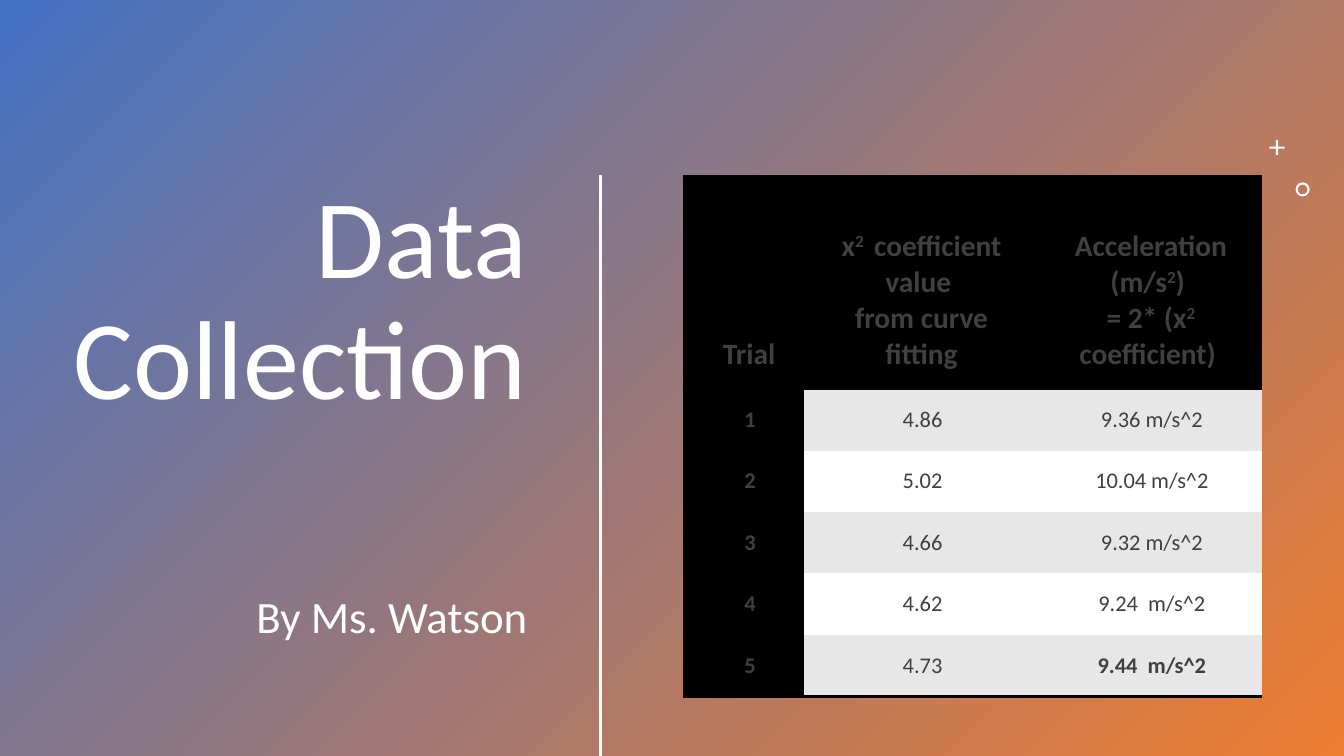
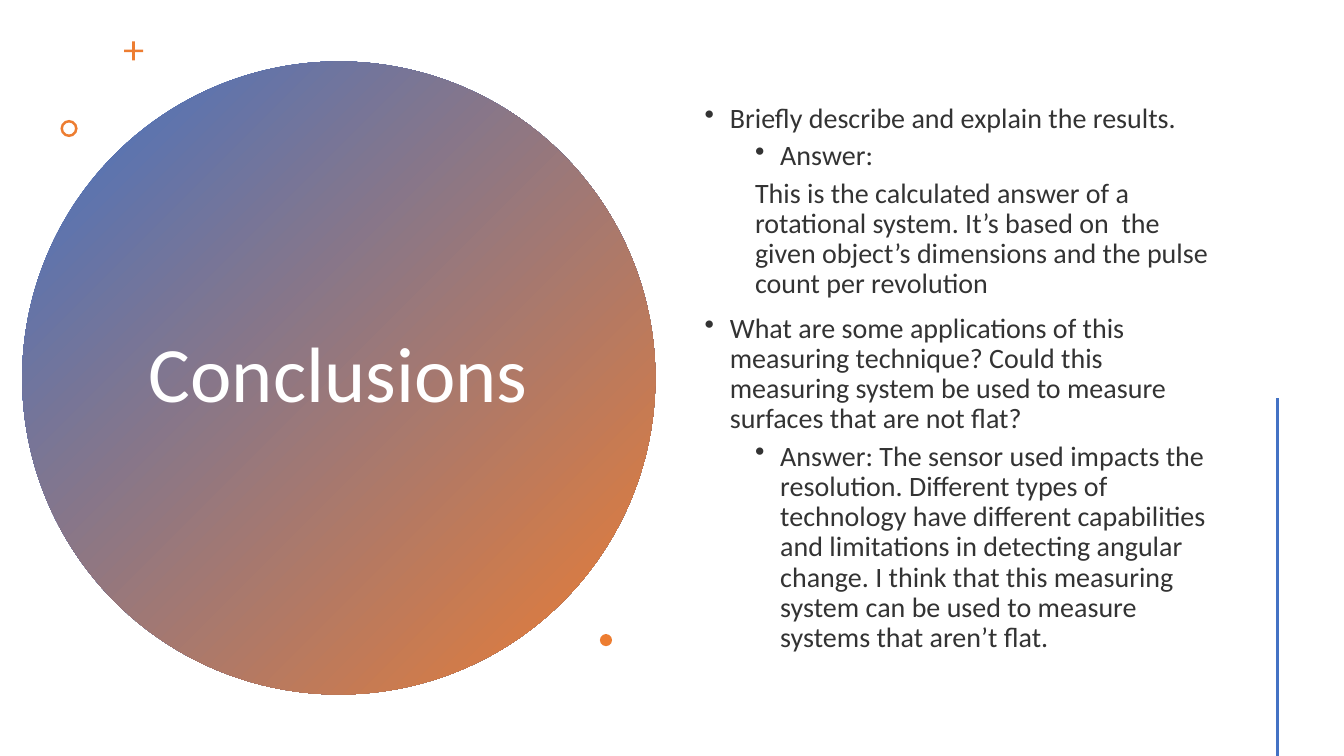
import pptx
import pptx.dml.color
import pptx.enum.shapes
import pptx.enum.text
import pptx.oxml
import pptx.oxml.ns
import pptx.util
from pptx.util import Inches

RGBColor = pptx.dml.color.RGBColor
Shape = pptx.enum.shapes.MSO_SHAPE
Align = pptx.enum.text.PP_ALIGN
Anchor = pptx.enum.text.MSO_ANCHOR
qn = pptx.oxml.ns.qn

FONT = "Calibri"
BLUE = RGBColor(0x44, 0x72, 0xC4)
ORANGE = RGBColor(0xED, 0x7D, 0x31)
WHITE = RGBColor(0xFF, 0xFF, 0xFF)
BLACK = RGBColor(0x00, 0x00, 0x00)
BODY_INK = RGBColor(0x33, 0x33, 0x33)
TABLE_INK = RGBColor(0x40, 0x40, 0x40)
BAND = RGBColor(0xE7, 0xE7, 0xE7)
PLAIN_TABLE_STYLE = "{2D5ABB26-0587-4C30-8999-92F81FD0307C}"

HEADINGS = [
    "Trial",
    "x|2 | coefficient value \nfrom curve fitting",
    "Acceleration (m/s|2|) \n= 2* (x|2 |coefficient) ",
]
TRIALS = [
    ("4.86", "9.36 m/s^2"),
    ("5.02", "10.04 m/s^2"),
    ("4.66", "9.32 m/s^2"),
    ("4.62", "9.24  m/s^2"),
    ("4.73", "9.44  m/s^2"),
]
DISCUSSION = [
    ("Briefly describe and explain the results.", 0, 0.25, True),
    ("Answer:", 1, 0.75, True),
    ("This is the calculated answer of a rotational system. It’s based on  the given "
     "object’s dimensions and the pulse count per revolution", 1, 0.5, False),
    ("What are some applications of this measuring technique? Could this measuring "
     "system be used to measure surfaces that are not flat?", 0, 0.25, True),
    ("Answer: The sensor used impacts the resolution. Different types of technology "
     "have different capabilities and limitations in detecting angular change. I think "
     "that this measuring system can be used to measure systems that aren’t flat.",
     1, 0.75, True),
]


def write(paragraph, text, size, color, bold=False, align=None, spacing=None, before=None):
    """Write text into a paragraph; pieces between bars are raised."""
    paragraph.alignment = align
    paragraph.line_spacing = spacing
    if before is not None:
        paragraph.space_before = pptx.util.Pt(before)
    for position, piece in enumerate(text.split("|")):
        for row, words in enumerate(piece.split("\n")):
            if row:
                paragraph.add_line_break()
            run = paragraph.add_run()
            run.text = words
            run.font.name = FONT
            run.font.size = pptx.util.Pt(size)
            run.font.bold = bold
            run.font.color.rgb = color
            if position % 2:
                run._r.get_or_add_rPr().set("baseline", "30000")


def set_indent(paragraph, margin, bulleted):
    """Indent a paragraph and give it a hanging bullet if asked."""
    properties = paragraph._p.get_or_add_pPr()
    properties.set("marL", str(Inches(margin)))
    properties.set("indent", str(Inches(-0.25) if bulleted else 0))
    if bulleted:
        bullet = properties.makeelement(qn("a:buChar"), {"char": "•"})
        properties.append(bullet)


def add_title(slide, text, box, size, align, anchor):
    """Place and format the title placeholder."""
    title = slide.shapes.title
    title.left, title.top, title.width, title.height = map(Inches, box)
    frame = title.text_frame
    frame.word_wrap = True
    frame.auto_size = pptx.enum.text.MSO_AUTO_SIZE.NONE
    frame.vertical_anchor = anchor
    write(frame.paragraphs[0], text, size, WHITE, align=align, spacing=0.9)


def add_text_frame(slide, box, anchor):
    """Add a wrapping text box and return its frame."""
    frame = slide.shapes.add_textbox(*map(Inches, box)).text_frame
    frame.word_wrap = True
    frame.vertical_anchor = anchor
    return frame


def add_shape(slide, preset, box, color=None):
    """Add an unlined shape, solid if a color is given."""
    shape = slide.shapes.add_shape(preset, *map(Inches, box))
    shape.shadow.inherit = False
    shape.line.fill.background()
    if color is not None:
        shape.fill.solid()
        shape.fill.fore_color.rgb = color
    return shape


def add_gradient_backdrop(slide, preset, box):
    """Add a diagonal blue to orange shape behind everything else."""
    backdrop = add_shape(slide, preset, box)
    backdrop.fill.gradient()
    backdrop.fill.gradient_angle = 315
    for stop, color, place in zip(backdrop.fill.gradient_stops, (BLUE, ORANGE), (0, 1)):
        stop.color.rgb = color
        stop.position = place
    slide.shapes._spTree.insert(2, backdrop._element)


def add_plus_and_ring(slide, plus, ring, color):
    """Add the small plus and ring, each given as left, top and size."""
    for preset, (left, top, size), adjustment in (
        (Shape.CROSS, plus, 0.43),
        (Shape.DONUT, ring, 0.15),
    ):
        mark = add_shape(slide, preset, (left, top, size, size), color)
        mark.adjustments[0] = adjustment


def add_vertical_rule(slide, x, top, color):
    """Add a line that runs down to the slide's lower edge."""
    rule = slide.shapes.add_connector(
        pptx.enum.shapes.MSO_CONNECTOR.STRAIGHT,
        Inches(x), Inches(top), Inches(x), Inches(7.5))
    rule.line.color.rgb = color
    rule.line.width = pptx.util.Pt(2)
    properties = rule._element.spPr
    properties.append(properties.makeelement(qn("a:effectLst"), {}))


def add_cell_border(cell, sides):
    """Draw black borders on the named sides of a cell."""
    properties = cell._tc.get_or_add_tcPr()
    for index, side in enumerate(sides):
        border = pptx.oxml.parse_xml(
            f'<a:ln{side} xmlns:a="http://schemas.openxmlformats.org/drawingml/2006/main" '
            f'w="25400"><a:solidFill><a:srgbClr val="{BLACK}"/></a:solidFill></a:ln{side}>')
        properties.insert(index, border)


def fill_cell(cell, text, size, fill, bold, anchor, inset):
    """Fill, pad and write one table cell."""
    cell.fill.solid()
    cell.fill.fore_color.rgb = fill
    cell.vertical_anchor = anchor
    cell.margin_left = Inches(0.29)
    cell.margin_top = cell.margin_right = cell.margin_bottom = Inches(inset)
    write(cell.text_frame.paragraphs[0], text, size, TABLE_INK, bold=bold, align=Align.CENTER)


def add_trial_table(slide):
    """Add the table of measured trials."""
    widths, heights = (1.2, 2.22, 2.33), [2.11] + [0.61] * len(TRIALS)
    table = slide.shapes.add_table(
        len(heights), len(widths), Inches(6.77), Inches(1.75),
        Inches(sum(widths)), Inches(sum(heights))).table
    table._tbl.tblPr.find(qn("a:tableStyleId")).text = PLAIN_TABLE_STYLE
    table.horz_banding = False
    for column, width in zip(table.columns, widths):
        column.width = Inches(width)
    for row, height in zip(table.rows, heights):
        row.height = Inches(height)
    for column, heading in enumerate(HEADINGS):
        cell = table.cell(0, column)
        fill_cell(cell, heading, 21, BLACK, True, Anchor.BOTTOM, 0.17)
        add_cell_border(cell, "TB")
    last = len(TRIALS)
    for number, values in enumerate(TRIALS, start=1):
        for column, value in enumerate((str(number), *values)):
            cell = table.cell(number, column)
            band = BAND if number % 2 else WHITE
            bold = column == 0 or (number, column) == (last, 2)
            fill_cell(cell, value, 16, band if column else BLACK, bold, Anchor.MIDDLE, 0.15)
            if number == last:
                add_cell_border(cell, "B")


def build_data_slide(slide):
    """Build the data collection slide."""
    add_gradient_backdrop(slide, Shape.RECTANGLE, (0, 0, 13.33, 7.5))
    add_title(slide, "Data Collection", (0.5, 1.75, 4.83, 3.97), 80, Align.RIGHT, Anchor.TOP)
    byline = add_text_frame(slide, (0.5, 5.85, 4.83, 1.13), Anchor.TOP)
    write(byline.paragraphs[0], "By Ms. Watson", 32, WHITE,
          align=Align.RIGHT, spacing=0.9, before=10)
    add_vertical_rule(slide, 5.96, 1.74, WHITE)
    add_plus_and_ring(slide, (12.59, 1.39, 0.15), (12.85, 1.81, 0.14), WHITE)
    add_trial_table(slide)


def build_conclusions_slide(slide):
    """Build the conclusions slide."""
    add_gradient_backdrop(slide, Shape.OVAL, (0.22, 0.61, 6.28, 6.28))
    add_title(slide, "Conclusions", (1.36, 1.41, 3.99, 4.67), 56, Align.CENTER, Anchor.MIDDLE)
    add_plus_and_ring(slide, (1.23, 0.41, 0.19), (0.6, 1.19, 0.17), ORANGE)
    discussion = add_text_frame(slide, (6.89, 0.57, 5.22, 6.38), Anchor.MIDDLE)
    for index, (text, level, margin, bulleted) in enumerate(DISCUSSION):
        paragraph = discussion.add_paragraph() if index else discussion.paragraphs[0]
        paragraph.level = level
        write(paragraph, text, 20, BODY_INK, spacing=0.9, before=5 if level else 10)
        set_indent(paragraph, margin, bulleted)
    add_shape(slide, Shape.OVAL, (5.95, 6.29, 0.12, 0.12), ORANGE)
    add_vertical_rule(slide, 12.67, 3.95, BLUE)


def main():
    """Build and save the presentation."""
    deck = pptx.Presentation()
    deck.slide_width, deck.slide_height = Inches(13.33), Inches(7.5)
    title_only = deck.slide_layouts[5]
    for build in (build_data_slide, build_conclusions_slide):
        build(deck.slides.add_slide(title_only))
    deck.save("out.pptx")


if __name__ == "__main__":
    main()
